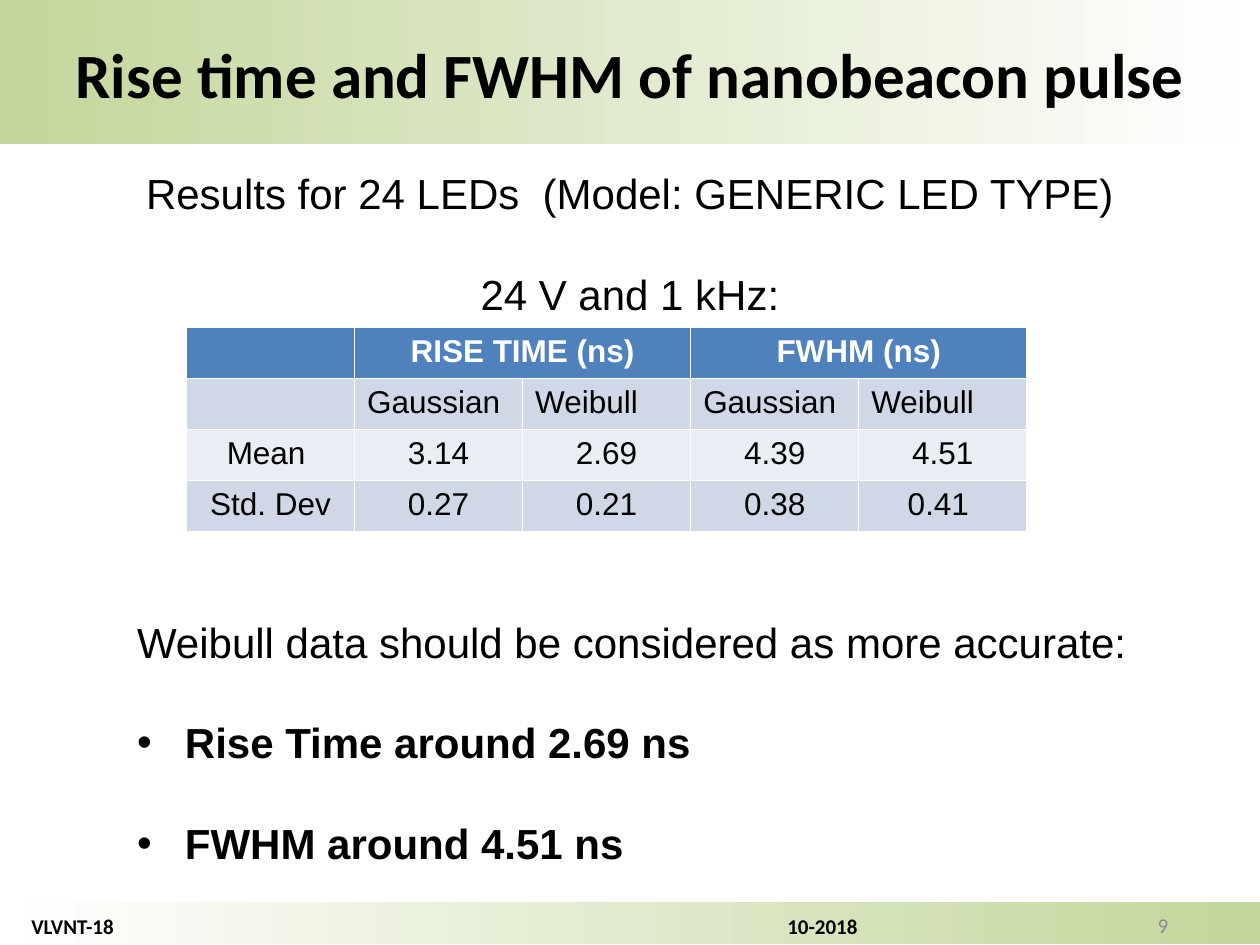
"""Builds the slide on nanobeacon rise time and pulse width."""
import pptx
import pptx.util
import pptx.dml.color
import pptx.enum.shapes
import pptx.enum.text
import pptx.oxml
import pptx.oxml.ns

W, H = 10, 7.5
BLACK, WHITE, GREY, GREEN = "000000", "FFFFFF", "8B8B8B", "C3D69B"
HEAD, BANDS = "4F81BD", ("D0D8E8", "E9EDF4")
ALIGN = pptx.enum.text.PP_ALIGN
LEFT, CENTER, RIGHT = ALIGN.LEFT, ALIGN.CENTER, ALIGN.RIGHT

TITLE = "Rise time and FWHM of nanobeacon pulse"
BANDS_AT = [(7.16, 0.33, 180), (0, 1.09, 0), (1.09, 0.05, 0)]
INTRO = ["Results for 24 LEDs  (Model: GENERIC LED TYPE)", "24 V and 1 kHz:"]
CONCLUSION = "Weibull data should be considered as more accurate:"
FINDINGS = ["Rise Time around 2.69 ns", "FWHM around 4.51 ns"]
FOOTER, PAGE = "VLVNT-18\t10-2018", "9"
ROWS = [
    ["", "RISE TIME (ns)", "", "FWHM (ns)", ""],
    ["", "Gaussian", "Weibull", "Gaussian", "Weibull"],
    ["Mean ", "3.14", "2.69", "4.39", "4.51"],
    ["Std. Dev", "0.27", "0.21", "0.38", "0.41 "],
]
TABLE_AT = (1.48, 2.6, 6.67, 1.62)
LINE_GAP = 28.8


def color(hex_string):
    return pptx.dml.color.RGBColor.from_string(hex_string)


def inches(*lengths):
    return [pptx.util.Inches(v) for v in lengths]


def write(p, text, size, font="Arial", ink=BLACK, bold=False, align=LEFT, gap=0):
    p.alignment = align
    p.space_before = pptx.util.Pt(gap)
    if text:
        r = p.add_run()
        r.text = text
        r.font.size, r.font.name, r.font.bold = pptx.util.Pt(size), font, bold
        r.font.color.rgb = color(ink)


def add_band(s, top, height, angle):
    sp = s.shapes.add_shape(pptx.enum.shapes.MSO_SHAPE.RECTANGLE, *inches(0, top, W, height))
    sp.shadow.inherit = False
    sp.line.fill.background()
    sp.fill.gradient()
    sp.fill.gradient_angle = angle
    for stop, shade in zip(sp.fill.gradient_stops, (GREEN, WHITE)):
        stop.color.rgb = color(shade)
    return sp


def add_box(s, *at, wrap=True):
    tf = s.shapes.add_textbox(*inches(*at)).text_frame
    tf.word_wrap = wrap
    return tf


def add_bullet(p, indent=0.38):
    pPr = p._p.get_or_add_pPr()
    pPr.set("marL", str(pptx.util.Inches(indent)))
    pPr.set("indent", str(pptx.util.Inches(-indent)))
    ns = pptx.oxml.ns.nsdecls("a")
    pPr.append(pptx.oxml.parse_xml(f'<a:buFont {ns} typeface="Arial"/>'))
    pPr.append(pptx.oxml.parse_xml(f'<a:buChar {ns} char="•"/>'))


def add_tab(p, position):
    ns = pptx.oxml.ns.nsdecls("a")
    stop = f'<a:tab pos="{pptx.util.Inches(position)}" algn="l"/>'
    p._p.get_or_add_pPr().append(pptx.oxml.parse_xml(f"<a:tabLst {ns}>{stop}</a:tabLst>"))


def add_results(s):
    table = s.shapes.add_table(len(ROWS), len(ROWS[0]), *inches(*TABLE_AT)).table
    for i, row in enumerate(ROWS):
        for j, text in enumerate(row):
            cell = table.cell(i, j)
            cell.fill.solid()
            cell.fill.fore_color.rgb = color(BANDS[(i - 1) % 2] if i else HEAD)
            write(cell.text_frame.paragraphs[0], text, 18, ink=BLACK if i else WHITE,
                  bold=i == 0, align=LEFT if i == 1 else CENTER)
    for j in (1, 3):
        table.cell(0, j).merge(table.cell(0, j + 1))


def main():
    prs = pptx.Presentation()
    prs.slide_width, prs.slide_height = inches(W, H)
    s = prs.slides.add_slide(prs.slide_layouts[6])

    for band in BANDS_AT:
        add_band(s, *band)
    tf = add_band(s, 0.23, 0.7, 0).text_frame
    tf.vertical_anchor = pptx.enum.text.MSO_ANCHOR.TOP
    write(tf.paragraphs[0], TITLE, 36, "Calibri", bold=True, align=CENTER)

    tf = add_box(s, 7.04, 7.14, 2.33, 0.4)
    tf.vertical_anchor = pptx.enum.text.MSO_ANCHOR.MIDDLE
    write(tf.paragraphs[0], PAGE, 12, "Calibri", GREY, align=RIGHT)
    p = add_box(s, 0.15, 7.2, 9.73, 0.3).paragraphs[0]
    write(p, FOOTER, 12, "Calibri", bold=True)
    add_tab(p, 6)

    add_results(s)

    tf = add_box(s, 0, 1.28, W, 4.34)
    for i, text in enumerate(INTRO):
        p = tf.add_paragraph() if i else tf.paragraphs[0]
        write(p, text, 24, align=CENTER, gap=LINE_GAP if i else 0)

    tf = add_box(s, 0.99, 4.84, 8.23, 2.42, wrap=False)
    write(tf.paragraphs[0], CONCLUSION, 24)
    for text in FINDINGS:
        p = tf.add_paragraph()
        write(p, text, 24, bold=True, gap=LINE_GAP)
        add_bullet(p)

    prs.save("out.pptx")


if __name__ == "__main__":
    main()
